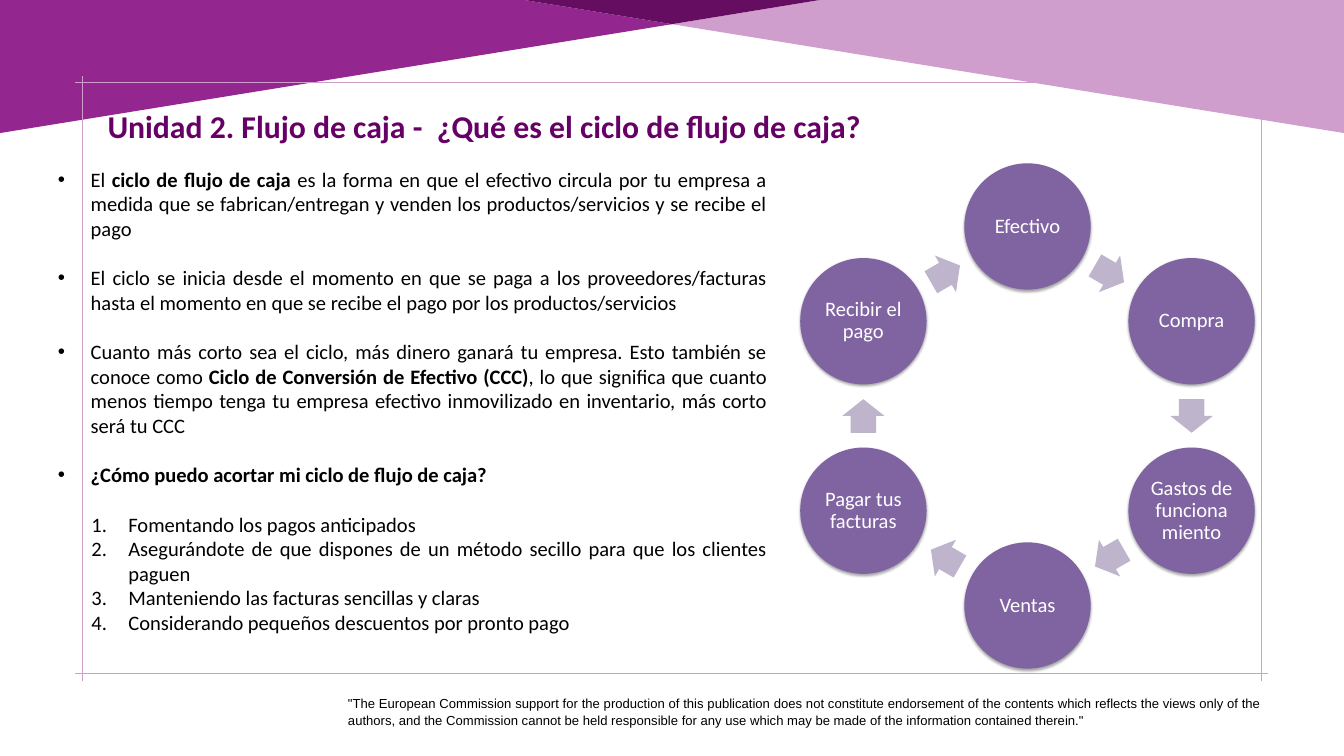
"""Build the cash-flow cycle slide with its bullet list and six-step ring."""
from dataclasses import dataclass
from math import cos, radians, sin

from lxml import etree
from pptx import Presentation
from pptx.dml.color import RGBColor
from pptx.enum.shapes import MSO_CONNECTOR, MSO_SHAPE
from pptx.enum.text import MSO_ANCHOR, MSO_AUTO_SIZE, PP_ALIGN
from pptx.oxml.ns import qn
from pptx.util import Inches, Pt

PURPLE = RGBColor(0x93, 0x26, 0x8F)
LILAC = RGBColor(0xCF, 0x9E, 0xCC)
DARK_PURPLE = RGBColor(0x64, 0x0D, 0x61)
TITLE_PURPLE = RGBColor(0x66, 0x00, 0x66)
STEP_VIOLET = RGBColor(0x80, 0x64, 0xA2)
ARROW_GREY = RGBColor(0xBE, 0xB5, 0xCD)
BLACK = RGBColor(0, 0, 0)
WHITE = RGBColor(0xFF, 0xFF, 0xFF)

STRAIGHT = MSO_CONNECTOR.STRAIGHT
OVAL = MSO_SHAPE.OVAL
RIGHT_ARROW = MSO_SHAPE.RIGHT_ARROW
TOP, MIDDLE = MSO_ANCHOR.TOP, MSO_ANCHOR.MIDDLE
LEFT, CENTER, JUSTIFY = PP_ALIGN.LEFT, PP_ALIGN.CENTER, PP_ALIGN.JUSTIFY
NO_AUTOFIT = MSO_AUTO_SIZE.NONE

RING_X, RING_Y, RING_RADIUS = 15.29, 6.19, 2.82
CIRCLE_SIZE = 1.88
ARROW_WIDTH, ARROW_HEIGHT = 0.5, 0.63
BODY_SIZE = 22
BLANK_LINE = 26.4


@dataclass
class Band:
    points: list[tuple[float, float]]
    color: RGBColor


@dataclass
class Item:
    spans: list[tuple[str, bool]]
    numbered: bool = False
    gap: float = BLANK_LINE


BANDS = [
    Band([(0, 1.98), (0, 0), (7.8, 0), (10, 0.36)], PURPLE),
    Band([(20, 1.98), (10, 0.36), (12.2, 0), (20, 0)], LILAC),
    Band([(10, 0.36), (7.8, 0), (12.2, 0)], DARK_PURPLE),
]
FRAME_LINES = [
    (1.12, 1.22, 18.87, 1.22),
    (1.12, 10.02, 18.87, 10.02),
    (1.22, 1.13, 1.22, 10.13),
    (18.77, 1.13, 18.77, 10.13),
]
TITLE = "Unidad 2. Flujo de caja -  ¿Qué es el ciclo de flujo de caja?"
ITEMS = [
    Item([("El ", False), ("ciclo de flujo de caja", True),
          (" es la forma en que el efectivo circula por tu empresa a medida que se "
           "fabrican/entregan y venden los productos/servicios y se recibe el pago", False)],
         gap=0),
    Item([("El ciclo se inicia desde el momento en que se paga a los proveedores/facturas "
           "hasta el momento en que se recibe el pago por los productos/servicios", False)]),
    Item([("Cuanto más corto sea el ciclo, más dinero ganará tu empresa. Esto también se "
           "conoce como ", False), ("Ciclo de Conversión de Efectivo (CCC)", True),
          (", lo que significa que cuanto menos tiempo tenga tu empresa efectivo "
           "inmovilizado en inventario, más corto será tu CCC", False)]),
    Item([("¿Cómo puedo acortar mi ciclo de flujo de caja?", True)]),
    Item([("Fomentando los pagos anticipados", False)], True),
    Item([("Asegurándote de que dispones de un método secillo para que los clientes "
           "paguen", False)], True, 0),
    Item([("Manteniendo las facturas sencillas y claras", False)], True, 0),
    Item([("Considerando pequeños descuentos por pronto pago", False)], True, 0),
]
STEPS = ["Efectivo", "Compra", "Gastos de funcionamiento", "Ventas",
         "Pagar tus facturas", "Recibir el pago"]
DISCLAIMER = (
    '"The European Commission support for the production of this publication does not '
    "constitute endorsement of the contents which reflects the views only of the authors, "
    "and the Commission cannot be held responsible for any use which may be made of the "
    'information contained therein."'
)


def place(box, left: float, top: float, width: float, height: float) -> None:
    box.left, box.top = Inches(left), Inches(top)
    box.width, box.height = Inches(width), Inches(height)


def style(para, size: float, color: RGBColor, align, name: str = "Calibri") -> None:
    para.alignment = align
    font = para.font
    font.name, font.size = name, Pt(size)
    font.color.rgb = color


def paint(shape, color: RGBColor) -> None:
    shape.shadow.inherit = False
    shape.fill.solid()
    shape.fill.fore_color.rgb = color
    shape.line.fill.background()


def draw_band(page, band: Band) -> None:
    corners = [(Inches(x), Inches(y)) for x, y in band.points]
    builder = page.shapes.build_freeform(*corners[0])
    builder.add_line_segments(corners[1:], close=True)
    paint(builder.convert_to_shape(), band.color)


def draw_frame_line(page, ends: tuple[float, float, float, float]) -> None:
    line = page.shapes.add_connector(STRAIGHT, *map(Inches, ends))
    line.line.color.rgb = LILAC
    line.line.width = Pt(0.5)
    etree.SubElement(line._element.spPr, qn("a:effectLst"))


def write_title(box) -> None:
    place(box, 1.5, 1.54, 12.71, 0.67)
    frame = box.text_frame
    frame.auto_size, frame.vertical_anchor = NO_AUTOFIT, TOP
    frame.text = TITLE
    style(frame.paragraphs[0], 34, TITLE_PURPLE, LEFT)
    frame.paragraphs[0].font.bold = True


def write_item(para, item: Item) -> None:
    para.level = int(item.numbered)
    para.space_before, para.space_after = Pt(item.gap), Pt(0)
    para.line_spacing = 1.0
    margin, indent = (1.06, -0.55) if item.numbered else (0.5, -0.49)
    properties = para._p.get_or_add_pPr()
    properties.set("marL", str(Inches(margin)))
    properties.set("indent", str(Inches(indent)))
    etree.SubElement(properties, qn("a:buFont"), typeface="+mj-lt" if item.numbered else "Arial")
    if item.numbered:
        etree.SubElement(properties, qn("a:buAutoNum"), type="arabicPeriod")
    else:
        etree.SubElement(properties, qn("a:buChar"), char="•")
    style(para, BODY_SIZE, BLACK, JUSTIFY)
    for text, bold in item.spans:
        span = para.add_run()
        span.text = text
        span.font.bold = bold


def write_body(box) -> None:
    place(box, 0.75, 2.43, 10.76, 7.57)
    frame = box.text_frame
    frame.auto_size, frame.vertical_anchor = NO_AUTOFIT, TOP
    for index, item in enumerate(ITEMS):
        write_item(frame.add_paragraph() if index else frame.paragraphs[0], item)


def write_disclaimer(page) -> None:
    box = page.shapes.add_textbox(Inches(5.08), Inches(10.29), Inches(13.79), Inches(0.52))
    frame = box.text_frame
    frame.word_wrap = True
    frame.text = DISCLAIMER
    frame.paragraphs[0].line_spacing = 1.07
    style(frame.paragraphs[0], 14, BLACK, JUSTIFY, "Arial")


def add_ring_shape(page, kind, angle: float, radius: float, width: float, height: float,
                   color: RGBColor):
    left = RING_X + radius * cos(radians(angle)) - width / 2
    top = RING_Y + radius * sin(radians(angle)) - height / 2
    shape = page.shapes.add_shape(kind, *map(Inches, (left, top, width, height)))
    paint(shape, color)
    return shape


def draw_step(page, label: str, angle: float) -> None:
    circle = add_ring_shape(page, OVAL, angle, RING_RADIUS, CIRCLE_SIZE, CIRCLE_SIZE, STEP_VIOLET)
    effects = circle._element.spPr.find(qn("a:effectLst"))
    shadow = etree.SubElement(effects, qn("a:outerShdw"), blurRad=str(Pt(3.1)),
                              dist=str(Pt(1.8)), dir="5400000", rotWithShape="0")
    tint = etree.SubElement(shadow, qn("a:srgbClr"), val=str(BLACK))
    etree.SubElement(tint, qn("a:alpha"), val="35000")
    frame = circle.text_frame
    frame.word_wrap, frame.vertical_anchor = True, MIDDLE
    frame.margin_left = frame.margin_right = Inches(0.03)
    frame.margin_top = frame.margin_bottom = Inches(0.03)
    frame.text = label
    frame.paragraphs[0].line_spacing = 0.9
    style(frame.paragraphs[0], BODY_SIZE, WHITE, CENTER)


def draw_arrow(page, angle: float) -> None:
    arrow = add_ring_shape(page, RIGHT_ARROW, angle, RING_RADIUS * cos(radians(30)),
                           ARROW_WIDTH, ARROW_HEIGHT, ARROW_GREY)
    arrow.adjustments[0], arrow.adjustments[1] = 0.6, 0.5
    arrow.rotation = angle + 90


def main() -> None:
    deck = Presentation()
    deck.slide_width, deck.slide_height = Inches(20), Inches(11.25)
    page = deck.slides.add_slide(deck.slide_layouts[1])
    for band in BANDS:
        draw_band(page, band)
    for ends in FRAME_LINES:
        draw_frame_line(page, ends)
    write_disclaimer(page)
    write_title(page.shapes.title)
    write_body(page.placeholders[1])
    turn = 360 / len(STEPS)
    for index, label in enumerate(STEPS):
        angle = index * turn - 90
        draw_step(page, label, angle)
        draw_arrow(page, angle + turn / 2)
    deck.save("out.pptx")


if __name__ == "__main__":
    main()
